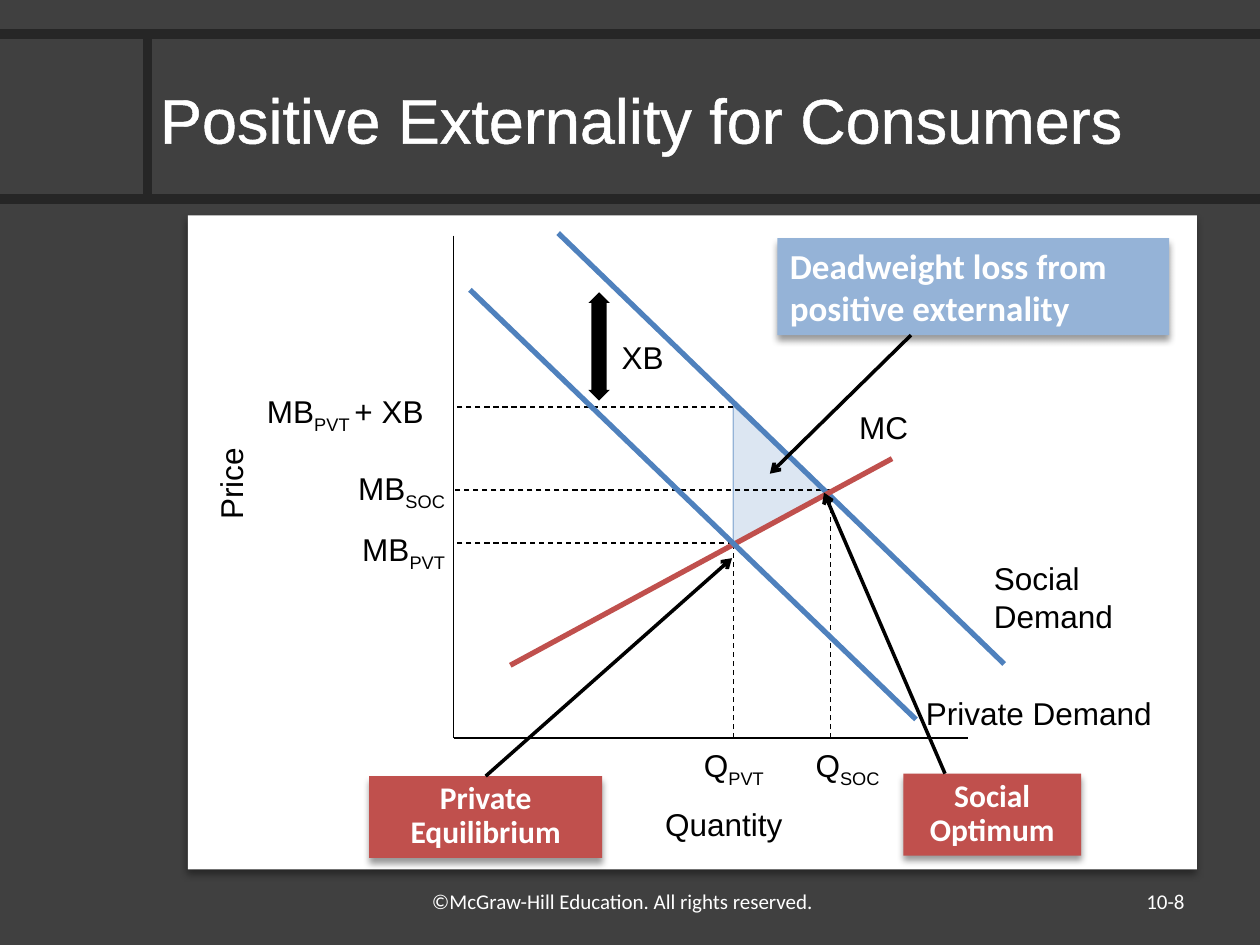
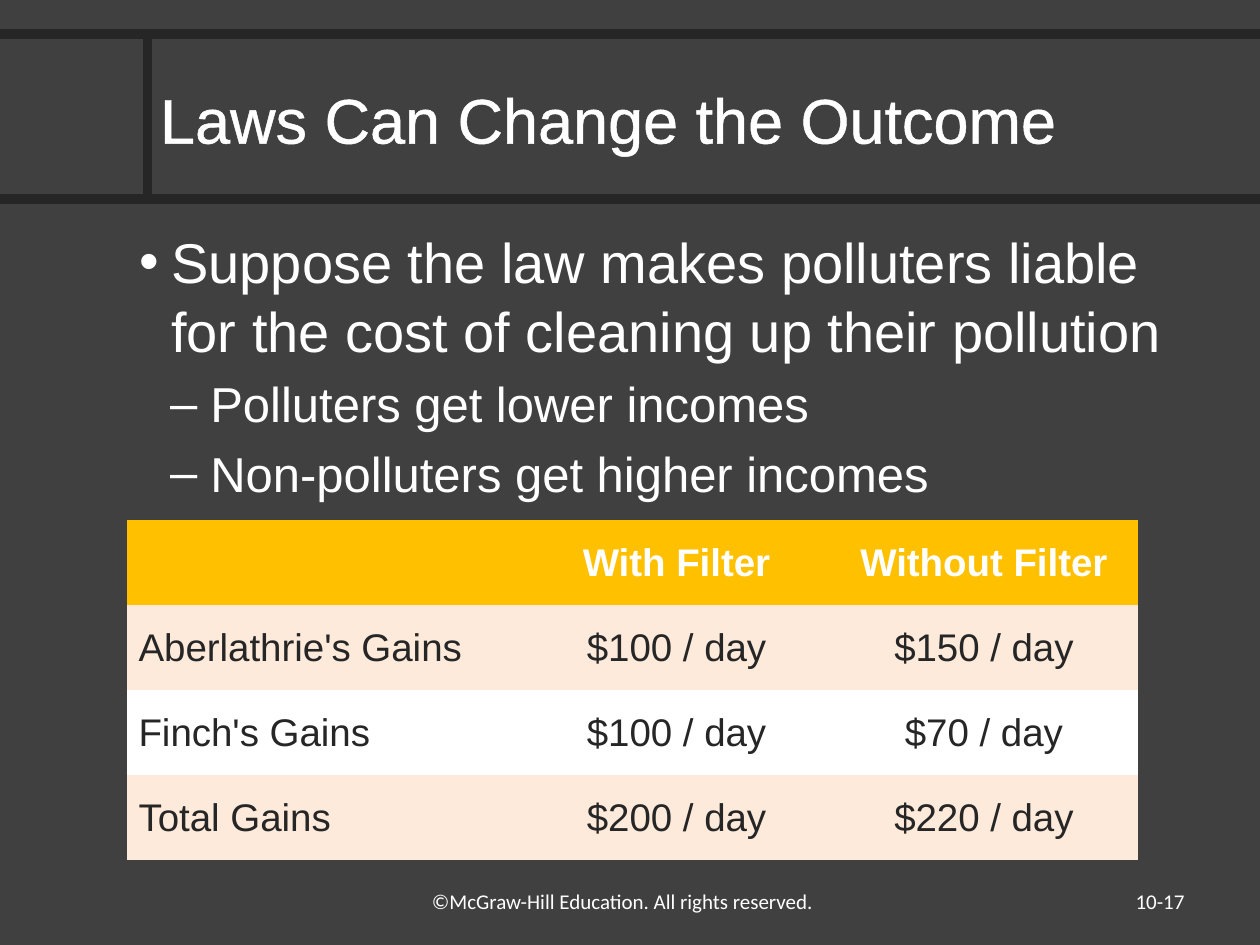
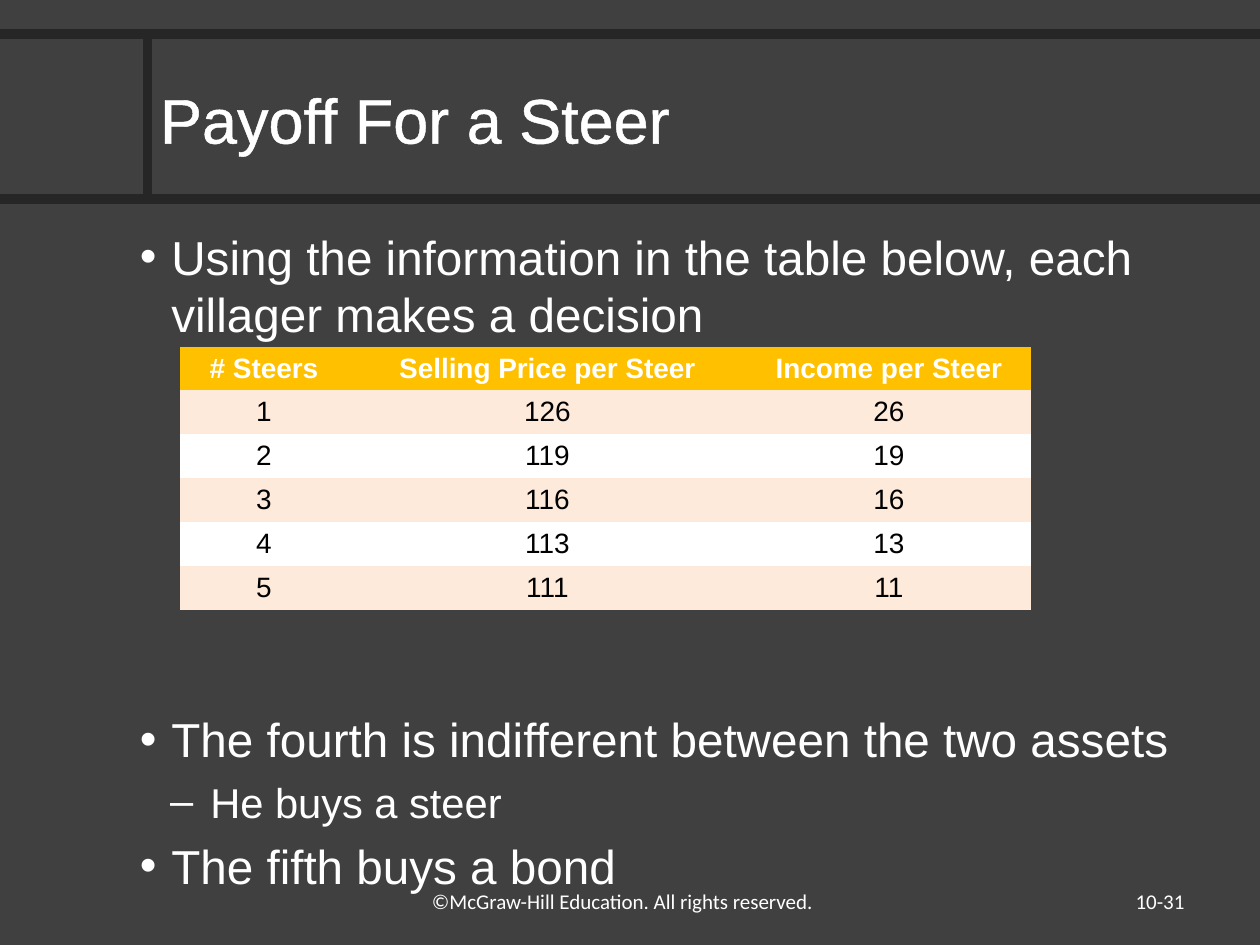
from lxml.etree import SubElement
from pptx import Presentation
from pptx.dml.color import RGBColor
from pptx.enum.dml import MSO_LINE
from pptx.enum.shapes import MSO_CONNECTOR, MSO_SHAPE
from pptx.enum.text import MSO_ANCHOR, MSO_AUTO_SIZE, PP_ALIGN
from pptx.oxml.ns import qn
from pptx.util import Emu, Inches, Pt

WHITE = RGBColor(0xFF, 0xFF, 0xFF)
BLACK = RGBColor(0, 0, 0)
SLATE = RGBColor(0x40, 0x40, 0x40)
INK = RGBColor(0x26, 0x26, 0x26)
GOLD = RGBColor(0xFF, 0xC0, 0x00)
PEACH = RGBColor(0xFD, 0xEA, 0xDA)
BLUE = RGBColor(0x4F, 0x81, 0xBD)
RED = RGBColor(0xC0, 0x50, 0x4D)
SKY = RGBColor(0x95, 0xB3, 0xD7)
PALE = RGBColor(0xDC, 0xE6, 0xF2)

LEFT, MID, RIGHT = PP_ALIGN.LEFT, PP_ALIGN.CENTER, PP_ALIGN.RIGHT
WIDE, HIGH = 10, 7.5
BAND_TOP, BAND_END, BAND_X = 0.27, 1.58, 1.17
CREDIT = "©McGraw-Hill Education. All rights reserved."
PLAIN = "{2D5ABB26-0587-4C30-8999-92F81FD0307C}"

BANDS = [
    (0, BAND_END, WIDE, BAND_END),
    (BAND_X, BAND_TOP, BAND_X, BAND_END),
    (0, BAND_TOP, WIDE, BAND_TOP),
]

AXIS_X, AXIS_Y = 3.6, 5.86
Q_PVT, Q_SOC = 5.82, 6.59
P_XB, P_SOC, P_PVT = 3.23, 3.89, 4.31
GUIDES = [
    (Q_PVT, P_XB, AXIS_X, P_XB),
    (Q_SOC, P_SOC, AXIS_X, P_SOC),
    (Q_PVT, P_PVT, AXIS_X, P_PVT),
    (Q_PVT, AXIS_Y, Q_PVT, P_PVT),
    (Q_SOC, AXIS_Y, Q_SOC, P_SOC),
]
AXES = [(AXIS_X, AXIS_Y, 7.68, AXIS_Y), (AXIS_X, 1.87, AXIS_X, AXIS_Y)]
CURVES = [
    ((4.43, 1.85, 7.97, 5.27), BLUE),
    ((7.08, 3.64, 4.05, 5.28), RED),
    ((3.73, 2.3, 7.27, 5.71), BLUE),
]
LOSS = [(Q_PVT, 3.22), (Q_PVT, P_PVT), (6.56, 3.91)]
LABELS = [
    ((4.79, 2.63, 0.62, 0.39), MID, ["XB"], 0),
    ((2.02, 3.06, 1.61, 0.42), LEFT, ["MB", "PVT ", "+ XB"], 0),
    ((2.61, 3.67, 1.02, 0.42), RIGHT, ["MB", "SOC"], 0),
    ((2.61, 4.16, 1.02, 0.42), RIGHT, ["MB", "PVT"], 0),
    ((5.41, 5.87, 0.83, 0.42), MID, ["Q", "PVT"], 0),
    ((6.25, 5.87, 0.83, 0.42), RIGHT, ["Q", "SOC"], 0),
    ((7.79, 4.39, 1.34, 0.74), LEFT, ["Social Demand"], 0),
    ((7.25, 5.46, 2.1, 0.42), LEFT, ["Private Demand"], 0),
    ((6.72, 3.19, 1.08, 0.42), LEFT, ["MC"], 0),
    ((4.79, 6.34, 1.91, 0.42), MID, ["Quantity"], 0),
    ((0.07, 3.63, 3.54, 0.42), MID, ["Price"], 270),
]
NOTES = [
    ((2.93, 6.16, 1.85, 0.65), RED, MID, 18, 0.9,
     ["Private", "Equilibrium"], (3.85, 6.16, 5.81, 4.43)),
    ((7.17, 6.14, 1.41, 0.65), RED, MID, 18, 0.9,
     ["Social", "Optimum"], (7.5, 6.14, 6.54, 3.91)),
    ((6.17, 1.89, 3.11, 0.77), SKY, LEFT, 20, 1,
     ["Deadweight loss from", "positive externality"], (7.23, 2.66, 6.11, 3.76)),
]

LAWS = [
    (0, "Suppose the law makes polluters liable for the cost of cleaning up their pollution", 0),
    (1, "Polluters get lower incomes", 5.6),
    (1, "Non-polluters get higher incomes", 5.6),
]
GAINS = [
    ["", "With Filter", "Without Filter"],
    ["Aberlathrie's Gains", "$100 / day", "$150 / day"],
    ["Finch's Gains", "$100 / day", "$70 / day"],
    ["Total Gains", "$200 / day", "$220 / day"],
]
STEERS = [
    (0, "Using the information in the table below, each villager makes a decision", 0),
    (0, "The fourth is indifferent between the two assets", 210),
    (1, "He buys a steer", 4.8),
    (0, "The fifth buys a bond", 5.4),
]
PRICES = [
    ["# Steers", "Selling Price per Steer", "Income per Steer"],
    ["1", "126", "26"],
    ["2", "119", "19"],
    ["3", "116", "16"],
    ["4", "113", "13"],
    ["5", "111", "11"],
]
INDENTS = [(0.25, -0.25, "•"), (0.56, -0.32, "–")]


def inch(nums):
    return [Inches(n) for n in nums]


def write(para, text, size, color, face="Arial", bold=False):
    run = para.add_run()
    run.text = text
    font = run.font
    font.size, font.name, font.bold = Pt(size), face, bold
    font.color.rgb = color
    return run


def line(slide, ends, color, width, dash=False, arrow=False):
    link = slide.shapes.add_connector(MSO_CONNECTOR.STRAIGHT, *inch(ends))
    link.line.color.rgb = color
    link.line.width = Pt(width)
    if dash:
        link.line.dash_style = MSO_LINE.DASH
    if arrow:
        SubElement(link.line._get_or_add_ln(), qn("a:tailEnd"), type="arrow")
    SubElement(link._element.spPr, qn("a:effectLst"))
    return link


def paint(shape, fill, edge=None):
    shape.shadow.inherit = False
    shape.fill.solid()
    shape.fill.fore_color.rgb = fill
    if edge:
        shape.line.color.rgb = edge
        shape.line.width = Pt(0.75)
    else:
        shape.line.fill.background()


def shade(shape):
    glow = shape._element.spPr.find(qn("a:effectLst"))
    cast = SubElement(glow, qn("a:outerShdw"), blurRad=str(Pt(4)), dist=str(Pt(3)),
                      dir="5400000", rotWithShape="0")
    tint = SubElement(cast, qn("a:srgbClr"), val="000000")
    SubElement(tint, qn("a:alpha"), val="40000")


def block(slide, box, fill, kind=MSO_SHAPE.RECTANGLE):
    shape = slide.shapes.add_shape(kind, *inch(box))
    paint(shape, fill)
    return shape


def label(slide, box, align=LEFT, anchor=MSO_ANCHOR.TOP):
    shape = slide.shapes.add_textbox(*inch(box))
    frame = shape.text_frame
    frame.word_wrap = True
    frame.vertical_anchor = anchor
    para = frame.paragraphs[0]
    para.alignment = align
    return shape, para


def place(shape, box):
    shape.left, shape.top, shape.width, shape.height = inch(box)
    frame = shape.text_frame
    frame.auto_size = MSO_AUTO_SIZE.NONE
    return frame


def start(deck, kind, title, page):
    slide = deck.slides.add_slide(deck.slide_layouts[kind])
    for ends in BANDS:
        line(slide, ends, INK, 5.5)
    frame = place(slide.shapes.title, (BAND_X, 0.3, WIDE - BAND_X, 1.28))
    frame.vertical_anchor = MSO_ANCHOR.MIDDLE
    para = frame.paragraphs[0]
    para.alignment = LEFT
    props = write(para, title, 36, WHITE)._r.get_or_add_rPr()
    edge = SubElement(props, qn("a:ln"), w=str(Pt(1.45)))
    SubElement(SubElement(edge, qn("a:solidFill")), qn("a:srgbClr"), val=str(WHITE))
    props.insert(0, edge)
    write(label(slide, (3.33, 7, 4.97, 0.35))[1], CREDIT, 12, WHITE, "Calibri")
    foot = label(slide, (7.17, 6.95, 2.33, 0.4), RIGHT, MSO_ANCHOR.MIDDLE)[1]
    write(foot, page, 12, WHITE, "Calibri")
    return slide


def fill_body(slide, items, sizes, height):
    frame = place(slide.placeholders[1], (1.01, 1.75, 8.49, height))
    for num, (level, text, gap) in enumerate(items):
        para = frame.add_paragraph() if num else frame.paragraphs[0]
        para.level = level
        left, hang, mark = INDENTS[level]
        props = para._p.get_or_add_pPr()
        props.set("marL", str(Inches(left)))
        props.set("indent", str(Inches(hang)))
        SubElement(props, qn("a:buFont"), typeface="Arial")
        SubElement(props, qn("a:buChar"), char=mark)
        para.line_spacing = Pt(round(sizes[level] * 1.22))
        para.space_before = Pt(gap)
        write(para, text, sizes[level], WHITE)


def grid(slide, rows, box, cols, size, ink, pads, first):
    table = slide.shapes.add_table(len(rows), len(cols), *inch(box)).table
    table._tbl.tblPr.find(qn("a:tableStyleId")).text = PLAIN
    for col, width in zip(table.columns, cols):
        col.width = Inches(width)
    for row in table.rows:
        row.height = Emu(int(Inches(box[3]) / len(rows)))
    for r, row in enumerate(rows):
        for c, text in enumerate(row):
            cell = table.cell(r, c)
            cell.fill.solid()
            cell.fill.fore_color.rgb = (PEACH if r % 2 else WHITE) if r else GOLD
            cell.vertical_anchor = MSO_ANCHOR.MIDDLE
            cell.margin_left = cell.margin_right = Inches(pads[0])
            cell.margin_top = cell.margin_bottom = Inches(pads[1])
            para = cell.text_frame.paragraphs[0]
            para.alignment = MID if c or not r else first
            if text:
                write(para, text, size, ink if r else WHITE, bold=not r)


def draw_note(slide, box, fill, align, size, space, words, ends):
    shape = block(slide, box, fill)
    shade(shape)
    frame = shape.text_frame
    frame.word_wrap = True
    frame.vertical_anchor = MSO_ANCHOR.TOP
    for num, text in enumerate(words):
        para = frame.add_paragraph() if num else frame.paragraphs[0]
        para.alignment = align
        para.line_spacing = space
        write(para, text, size, WHITE, "Calibri", True)
    link = line(slide, ends, BLACK, 2, arrow=True)
    if abs(box[0] + box[2] / 2 - ends[0]) < 0.02:
        link.begin_connect(shape, 0)


def draw_graph(slide):
    shade(block(slide, (1.49, 1.71, 8.01, 5.19), WHITE))
    gap = block(slide, (4.67, 2.32, 0.17, 0.86), BLACK, MSO_SHAPE.UP_DOWN_ARROW)
    gap.adjustments[0], gap.adjustments[1] = 0.5, 0.71
    points = [inch(point) for point in LOSS]
    pen = slide.shapes.build_freeform(*points[0])
    pen.add_line_segments(points[1:], close=True)
    paint(pen.convert_to_shape(), PALE, SKY)
    for ends in GUIDES:
        line(slide, ends, BLACK, 0.75, dash=True)
    for ends in AXES:
        line(slide, ends, BLACK, 1)
    for ends, color in CURVES:
        line(slide, ends, color, 3)
    for box, align, parts, turn in LABELS:
        shape, para = label(slide, box, align)
        shape.rotation = turn
        for num, text in enumerate(parts):
            run = write(para, text, 18, BLACK)
            if num == 1:
                run._r.get_or_add_rPr().set("baseline", "-25000")
    for note in NOTES:
        draw_note(slide, *note)


def main():
    deck = Presentation()
    deck.slide_width, deck.slide_height = inch((WIDE, HIGH))
    back = deck.slide_master.background.fill
    back.solid()
    back.fore_color.rgb = SLATE

    draw_graph(start(deck, 5, "Positive Externality for Consumers", "10-8"))

    slide = start(deck, 1, "Laws Can Change the Outcome", "10-17")
    fill_body(slide, LAWS, (32, 28), 2.33)
    grid(slide, GAINS, (1.01, 4.13, 8.02, 2.7), (3.14, 2.44, 2.44),
         22, INK, (0.09, 0.05), LEFT)

    slide = start(deck, 1, "Payoff For a Steer", "10-31")
    fill_body(slide, STEERS, (27.2, 23.8), 4.95)
    grid(slide, PRICES, (1.43, 2.75, 6.75, 2.09), (1.33, 3.17, 2.25),
         16, BLACK, (0.08, 0.04), MID)

    deck.save("out.pptx")


if __name__ == "__main__":
    main()
